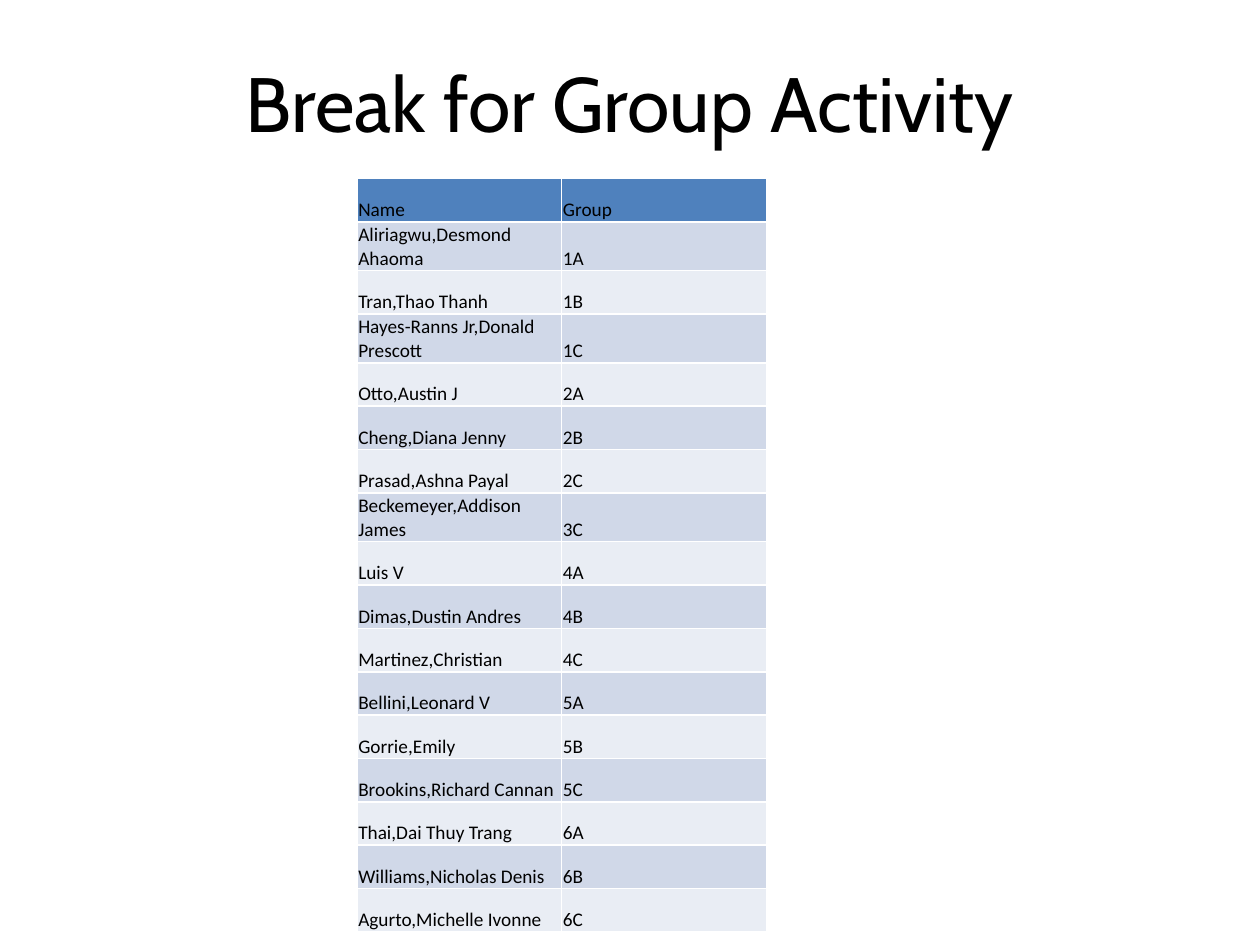
import pptx
import pptx.dml.color
import pptx.enum.text
import pptx.util
from dataclasses import dataclass

Pt = pptx.util.Pt
RGB = pptx.dml.color.RGBColor
Anchor = pptx.enum.text.MSO_ANCHOR
Align = pptx.enum.text.PP_ALIGN

BLACK = RGB(0x00, 0x00, 0x00)
BLUE = RGB(0x4F, 0x81, 0xBD)
BANDS = (RGB(0xE9, 0xED, 0xF4), RGB(0xD0, 0xD8, 0xE8))


@dataclass
class Member:
    name: str
    group: str


HEAD = Member("Name", "Group")
TEAM = [
    Member("Aliriagwu,Desmond Ahaoma", "1A"),
    Member("Tran,Thao Thanh", "1B"),
    Member("Hayes-Ranns Jr,Donald Prescott", "1C"),
    Member("Otto,Austin J", "2A"),
    Member("Cheng,Diana Jenny", "2B"),
    Member("Prasad,Ashna Payal", "2C"),
    Member("Beckemeyer,Addison James", "3C"),
    Member("Luis V", "4A"),
    Member("Dimas,Dustin Andres", "4B"),
    Member("Martinez,Christian", "4C"),
    Member("Bellini,Leonard V", "5A"),
    Member("Gorrie,Emily", "5B"),
    Member("Brookins,Richard Cannan", "5C"),
    Member("Thai,Dai Thuy Trang", "6A"),
    Member("Williams,Nicholas Denis", "6B"),
    Member("Agurto,Michelle Ivonne", "6C"),
]


def add_run(para, text: str, font: str, size: float) -> None:
    run = para.add_run()
    run.text = text
    run.font.name = font
    run.font.size = Pt(size)
    run.font.bold = False
    run.font.color.rgb = BLACK


def fill_cell(cell, text: str, color: RGB) -> None:
    cell.fill.solid()
    cell.fill.fore_color.rgb = color
    cell.vertical_anchor = Anchor.BOTTOM
    cell.margin_left = cell.margin_right = cell.margin_top = Pt(0.72)
    cell.margin_bottom = Pt(0)
    add_run(cell.text_frame.paragraphs[0], text, "Calibri", 11)


def draw_title(slide, text: str) -> None:
    title = slide.shapes.title
    title.left, title.top = Pt(54), Pt(0)
    title.width, title.height = Pt(612), Pt(116)
    frame = title.text_frame
    frame.vertical_anchor = Anchor.MIDDLE
    para = frame.paragraphs[0]
    para.alignment = Align.CENTER
    add_run(para, text, "Cabin", 44)


def draw_table(slide, rows: list[Member]) -> None:
    # The default table style supplies the white borders
    table = slide.shapes.add_table(
        len(rows), 2, Pt(204), Pt(102), Pt(234), Pt(429)).table
    for col in table.columns:
        col.width = Pt(117)
    for i, member in enumerate(rows):
        table.rows[i].height = Pt(24.8)
        color = BANDS[i % 2] if i else BLUE
        fill_cell(table.cell(i, 0), member.name, color)
        fill_cell(table.cell(i, 1), member.group, color)


def main() -> None:
    deck = pptx.Presentation()
    deck.slide_width, deck.slide_height = Pt(720), Pt(540)
    slide = deck.slides.add_slide(deck.slide_layouts[5])
    draw_title(slide, "Break for Group Activity")
    draw_table(slide, [HEAD] + TEAM)
    deck.save("out.pptx")


if __name__ == "__main__":
    main()
